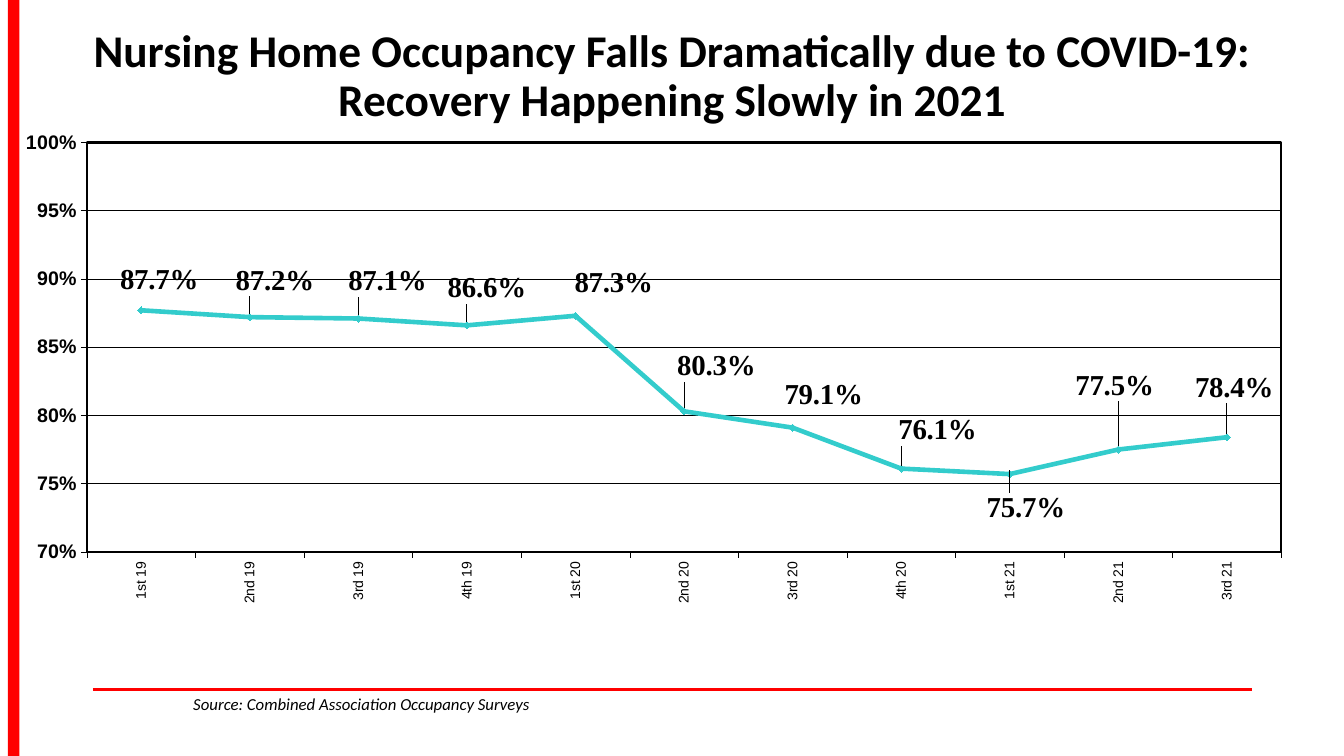
from lxml.etree import SubElement
from pptx import Presentation
from pptx.chart.data import CategoryChartData
from pptx.dml.color import RGBColor
from pptx.enum.chart import XL_CHART_TYPE, XL_LABEL_POSITION, XL_MARKER_STYLE, XL_TICK_MARK
from pptx.enum.shapes import MSO_CONNECTOR, MSO_SHAPE
from pptx.enum.text import MSO_ANCHOR, PP_ALIGN
from pptx.oxml import parse_xml
from pptx.oxml.ns import nsdecls, qn
from pptx.util import Cm, Pt

# Content
TITLE = "Nursing Home Occupancy Falls Dramatically due to COVID-19:\vRecovery Happening Slowly in 2021"
SOURCE = "Source: Combined Association Occupancy Surveys"
# quarter, occupancy, label shift right and down in cm
OCCUPANCY = [
    ("1st 19", 0.877, 0.45, -0.18),
    ("2nd 19", 0.872, 0.63, -0.33),
    ("3rd 19", 0.871, 0.73, -0.35),
    ("4th 19", 0.866, 0.5, -0.35),
    ("1st 20", 0.873, 0.96, -0.23),
    ("2nd 20", 0.803, 0.81, -0.55),
    ("3rd 20", 0.791, 0.78, -0.23),
    ("4th 20", 0.761, 0.91, -0.38),
    ("1st 21", 0.757, 0.4, 1.44),
    ("2nd 21", 0.775, -0.1, -1.01),
    ("3rd 21", 0.784, 0.18, -0.66),
]
COLORS = {"text": "000000", "accent": "FF0000", "series": "33CCCC"}
CHART_LEFT, CHART_TOP, CHART_WIDTH, CHART_HEIGHT = 0.13, 2.29, 33.15, 13.72
PLOT_LEFT, PLOT_TOP, PLOT_WIDTH, PLOT_HEIGHT = 2.06, 1.3, 30.1, 10.32


def color(name):
    return RGBColor.from_string(COLORS[name])


def style_font(font, name, size, bold=False, italic=False):
    font.name, font.size, font.bold, font.italic = name, Pt(size), bold, italic
    font.color.rgb = color("text")


def style_line(line, name, width):
    line.color.rgb = color(name)
    line.width = Pt(width)


def add_text(text, left, top, width, height):
    frame = slide.shapes.add_textbox(Cm(left), Cm(top), Cm(width), Cm(height)).text_frame
    frame.word_wrap = True
    frame.text = text
    return frame, frame.paragraphs[0]


def add_layout(parent, position, **values):
    """Place a chart part by fractions of the chart size."""
    layout = parent.find(qn("c:layout"))
    if layout is not None:
        parent.remove(layout)
    layout = parse_xml(f"<c:layout {nsdecls('c')}/>")
    parent.insert(position, layout)
    manual = SubElement(layout, qn("c:manualLayout"))
    for tag, value in values.items():
        SubElement(manual, qn(f"c:{tag}")).set("val", str(value))


presentation = Presentation()
presentation.slide_width, presentation.slide_height = Cm(33.87), Cm(19.05)
slide = presentation.slides.add_slide(presentation.slide_layouts[6])

# Red rule and side bar
rule = slide.shapes.add_connector(MSO_CONNECTOR.STRAIGHT, Cm(2.34), Cm(17.37), Cm(31.55), Cm(17.37))
style_line(rule.line, "accent", 2)
SubElement(rule._element.spPr, qn("a:effectLst"))
bar = slide.shapes.add_shape(MSO_SHAPE.RECTANGLE, Cm(0.2), 0, Cm(0.29), presentation.slide_height)
bar.shadow.inherit = False
bar.fill.solid()
bar.fill.fore_color.rgb = color("accent")
bar.line.fill.background()

# Title
frame, paragraph = add_text(TITLE, 1.88, 0.84, 30.12, 2.21)
frame.vertical_anchor = MSO_ANCHOR.MIDDLE
paragraph.alignment = PP_ALIGN.CENTER
paragraph.line_spacing = 0.9
style_font(paragraph.font, "Calibri", 32.4, bold=True)

# Occupancy chart
data = CategoryChartData(number_format="0.0%")
data.categories = [row[0] for row in OCCUPANCY]
data.add_series("Series 1", [row[1] for row in OCCUPANCY])
chart = slide.shapes.add_chart(
    XL_CHART_TYPE.LINE_MARKERS, Cm(CHART_LEFT), Cm(CHART_TOP), Cm(CHART_WIDTH), Cm(CHART_HEIGHT), data
).chart
chart.has_legend = chart.has_title = False
style_font(chart.font, "Times New Roman", 20.6, bold=True)

# Plot frame
plot_area = chart._chartSpace.chart.plotArea
add_layout(
    plot_area, 0, layoutTarget="inner", xMode="edge", yMode="edge",
    x=PLOT_LEFT / CHART_WIDTH, y=PLOT_TOP / CHART_HEIGHT,
    w=PLOT_WIDTH / CHART_WIDTH, h=PLOT_HEIGHT / CHART_HEIGHT,
)
plot_area.append(parse_xml(
    f'<c:spPr {nsdecls("c", "a")}><a:noFill/><a:ln w="{Pt(1.5)}"><a:solidFill>'
    f'<a:srgbClr val="{COLORS["text"]}"/></a:solidFill></a:ln></c:spPr>'
))

# Axes
quarters, percent = chart.category_axis, chart.value_axis
for axis, size, bold in ((quarters, 10, False), (percent, 14, True)):
    axis.major_tick_mark = XL_TICK_MARK.OUTSIDE
    axis.minor_tick_mark = XL_TICK_MARK.NONE
    style_line(axis.format.line, "text", 0.27)
    style_font(axis.tick_labels.font, "Arial", size, bold)
quarters._element.find(qn("c:txPr")).find(qn("a:bodyPr")).set("rot", "-5400000")
percent.minimum_scale, percent.maximum_scale, percent.major_unit = 0.7, 1, 0.05
percent.tick_labels.number_format = "0%"
percent.tick_labels.number_format_is_linked = False
percent.has_major_gridlines = True
style_line(percent.major_gridlines.format.line, "text", 0.27)

# Line and markers
series = chart.plots[0].series[0]
series.smooth = False
style_line(series.format.line, "series", 3.29)
series.marker.style, series.marker.size = XL_MARKER_STYLE.DIAMOND, 5
series.marker.format.fill.solid()
series.marker.format.fill.fore_color.rgb = color("series")
style_line(series.marker.format.line, "series", 0.75)

# Value labels, each shifted from its place above the point
labels = series.data_labels
labels.show_value = True
labels.number_format, labels.number_format_is_linked = "0.0%", False
style_font(labels.font, "Times New Roman", 20.6, bold=True)
for index, (_, _, right, down) in enumerate(OCCUPANCY):
    label = series.points[index].data_label
    style_font(label.font, "Times New Roman", 20.6, bold=True)
    label.position = XL_LABEL_POSITION.ABOVE
    element = labels._element.findall(qn("c:dLbl"))[index]
    add_layout(element, 1, x=right / CHART_WIDTH, y=down / CHART_HEIGHT)

# Source note
frame, paragraph = add_text(SOURCE, 4.62, 17.35, 13.39, 1.27)
style_font(paragraph.font, "Calibri", 12, italic=True)

presentation.save("out.pptx")
